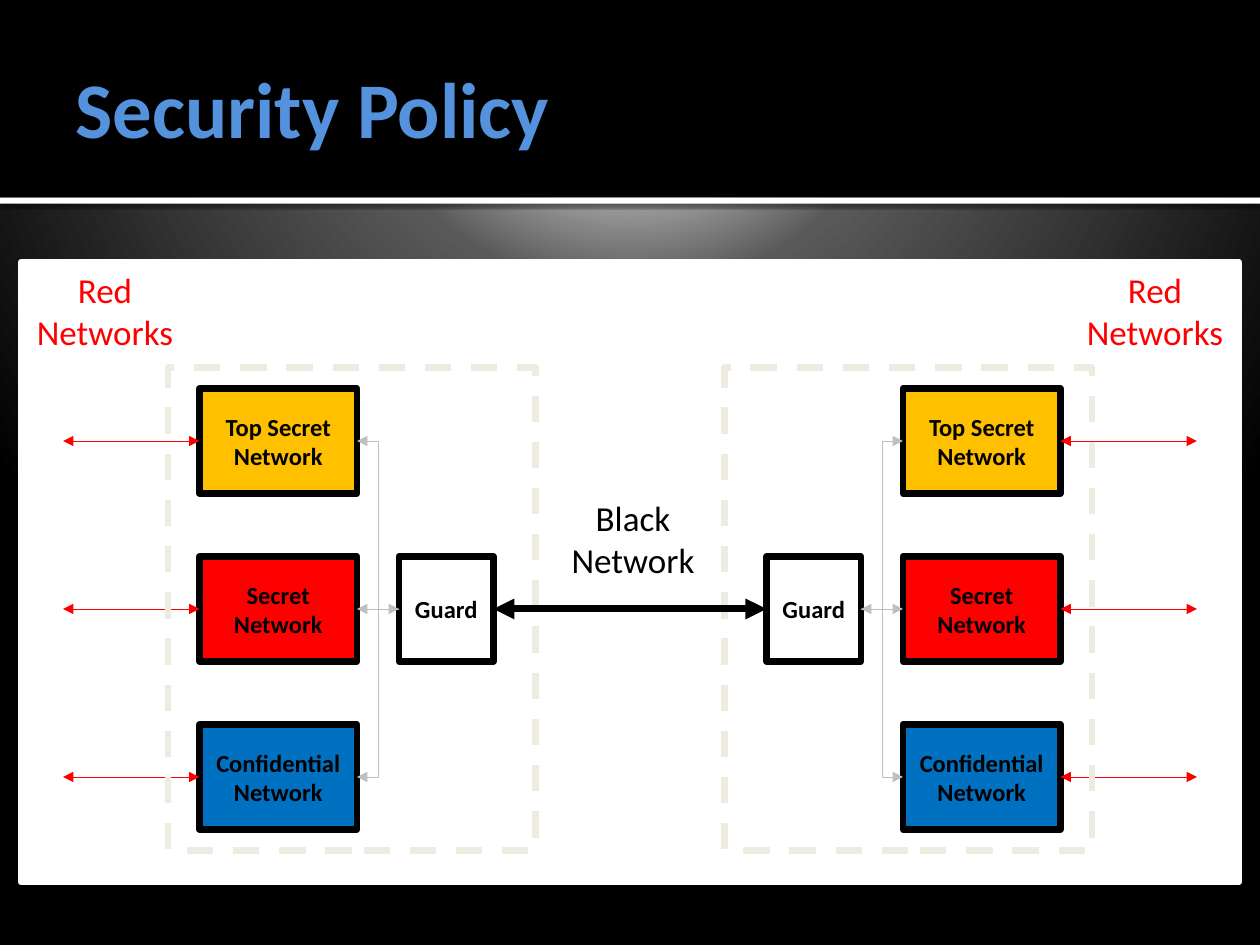
from lxml.etree import SubElement
from pptx import Presentation
from pptx.dml.color import RGBColor
from pptx.enum.dml import MSO_LINE
from pptx.enum.shapes import MSO_CONNECTOR, MSO_SHAPE
from pptx.enum.text import MSO_ANCHOR, PP_ALIGN
from pptx.oxml import parse_xml
from pptx.oxml.ns import nsdecls, qn
from pptx.util import Pt

PX = 7620  # 120 px to the inch
W, H = 1200, 900
FONT = "Calibri"
BLACK, WHITE, RED, GREY, CREAM = "000000", "FFFFFF", "FF0000", "BFBFBF", "EEECE1"

TITLE = "Security Policy"
NETWORKS = [
    (["Top Secret", "Network"], "FFC000"),
    (["Secret", "Network"], RED),
    (["Confidential", "Network"], "0070C0"),
]
GUARD = ["Guard"]
RED_LABEL = ["Red", "Networks"]
BLACK_LABEL = ["Black", "Network"]
GLOW = [(12, "C0C0C0"), (20, "BEBEBE"), (37, "595959"), (100, BLACK)]

# Left half; the right half mirrors it
NET_X, NET_Y, NET_W, BOX_H, NET_STEP = 190, 370, 150, 100, 160
GUARD_X, GUARD_W = 380, 90
ZONE = (160, 350, 350, 460)
LABEL = (20, 250, 160, 92)
OUTER_X = 60
LEFT_SITE, RIGHT_SITE = 1, 3


def px(*values):
    return [round(v * PX) for v in values]


def rgb(color):
    return RGBColor.from_string(color)


def write(shape, lines, size, color=BLACK, bold=False, align=PP_ALIGN.CENTER,
          anchor=MSO_ANCHOR.MIDDLE, wrap=True):
    tf = shape.text_frame
    tf.word_wrap = wrap
    tf.vertical_anchor = anchor
    for i, line in enumerate(lines):
        p = tf.add_paragraph() if i else tf.paragraphs[0]
        p.alignment = align
        r = p.add_run()
        r.text = line
        r.font.name, r.font.size, r.font.bold = FONT, Pt(size), bold
        r.font.color.rgb = rgb(color)


def add_box(s, x, y, w, h, fill=None, line=None, dash=None):
    sp = s.shapes.add_shape(MSO_SHAPE.RECTANGLE, *px(x, y, w, h))
    sp.shadow.inherit = False
    if fill:
        sp.fill.solid()
        sp.fill.fore_color.rgb = rgb(fill)
    else:
        sp.fill.background()
    if line:
        sp.line.color.rgb = rgb(line)
        sp.line.width = Pt(3.78)
        sp.line.dash_style = dash
    else:
        sp.line.fill.background()
    return sp


def add_label(s, x, y, w, h, lines, color):
    write(s.shapes.add_textbox(*px(x, y, w, h)), lines, 20, color,
          anchor=MSO_ANCHOR.TOP, wrap=False)


def add_arrow(s, start, end, color, width=0.5, kind=MSO_CONNECTOR.STRAIGHT,
              ends=("headEnd", "tailEnd")):
    """Join two (shape, site) pairs; an end may also be an (x, y) point in px."""
    c = s.shapes.add_connector(kind, 0, 0, 0, 0)
    c.begin_connect(*start)
    if isinstance(end[0], int):
        c.end_x, c.end_y = px(*end)
    else:
        c.end_connect(*end)
    c.line.color.rgb = rgb(color)
    c.line.width = Pt(width)
    ln = c.line._ln
    for name in ends:
        SubElement(ln, qn(f"a:{name}"), type="triangle")
    SubElement(c._element.spPr, qn("a:effectLst"))


def set_glow(s):
    s.background.fill.solid()
    stops = "".join(f'<a:gs pos="{pos * 1000}"><a:srgbClr val="{color}"/></a:gs>'
                    for pos, color in GLOW)
    grad = parse_xml(
        f'<a:gradFill {nsdecls("a")} rotWithShape="1"><a:gsLst>{stops}</a:gsLst>'
        '<a:path path="circle"><a:fillToRect l="10000" t="-25000" r="10000" b="125000"/>'
        '</a:path></a:gradFill>')
    solid = s._element.find(".//" + qn("a:solidFill"))
    solid.getparent().replace(solid, grad)


def add_header(s):
    rule = add_box(s, 0, 188, W, 6, WHITE)
    effects = rule._element.spPr.find(qn("a:effectLst"))
    effects.append(parse_xml(
        f'<a:outerShdw {nsdecls("a")} blurRad="{Pt(2.5)}" dist="{Pt(0.8)}" dir="5400000">'
        f'<a:srgbClr val="{BLACK}"><a:alpha val="60000"/></a:srgbClr></a:outerShdw>'))
    add_box(s, 0, 0, W, 188, BLACK)
    title = s.shapes.title
    title.left, title.top, title.width, title.height = px(60, 20, 1080, 164)
    tf = title.text_frame
    tf.margin_left, tf.margin_right, tf.margin_top, tf.margin_bottom = px(12, 6, 6, 6)
    write(title, [TITLE], 45, "5492DE", bold=True, align=PP_ALIGN.LEFT)
    s.shapes._spTree.append(title._element)  # in front of the band


def add_side(s, mirrored):
    """Draw one site and return its guard box."""
    def place(x, y, w, h):
        return (W - x - w if mirrored else x), y, w, h

    inner, outer = (LEFT_SITE, RIGHT_SITE) if mirrored else (RIGHT_SITE, LEFT_SITE)
    outer_x = W - OUTER_X if mirrored else OUTER_X
    guard = add_box(s, *place(GUARD_X, NET_Y + NET_STEP, GUARD_W, BOX_H), WHITE, BLACK)
    write(guard, GUARD, 14, bold=True)
    for i, (lines, color) in enumerate(NETWORKS):
        y = NET_Y + i * NET_STEP
        net = add_box(s, *place(NET_X, y, NET_W, BOX_H), color, BLACK)
        write(net, lines, 14, bold=True)
        if i == 1:
            add_arrow(s, (net, inner), (guard, outer), GREY)
        else:
            add_arrow(s, (net, inner), (guard, outer), GREY,
                      kind=MSO_CONNECTOR.ELBOW, ends=("headEnd",))
        add_arrow(s, (net, outer), (outer_x, y + BOX_H // 2), RED)
    add_label(s, *place(*LABEL), RED_LABEL, RED)
    add_box(s, *place(*ZONE), line=CREAM, dash=MSO_LINE.DASH)
    return guard


def main():
    prs = Presentation()
    prs.slide_width, prs.slide_height = px(W, H)
    s = prs.slides.add_slide(prs.slide_layouts[5])
    set_glow(s)
    add_header(s)
    add_box(s, 20, 250, 1160, 590, WHITE, WHITE)
    left_guard = add_side(s, mirrored=False)
    right_guard = add_side(s, mirrored=True)
    add_label(s, 530, 467, 146, 92, BLACK_LABEL, BLACK)
    add_arrow(s, (right_guard, LEFT_SITE), (left_guard, RIGHT_SITE), BLACK, width=4)
    prs.save("out.pptx")


if __name__ == "__main__":
    main()
